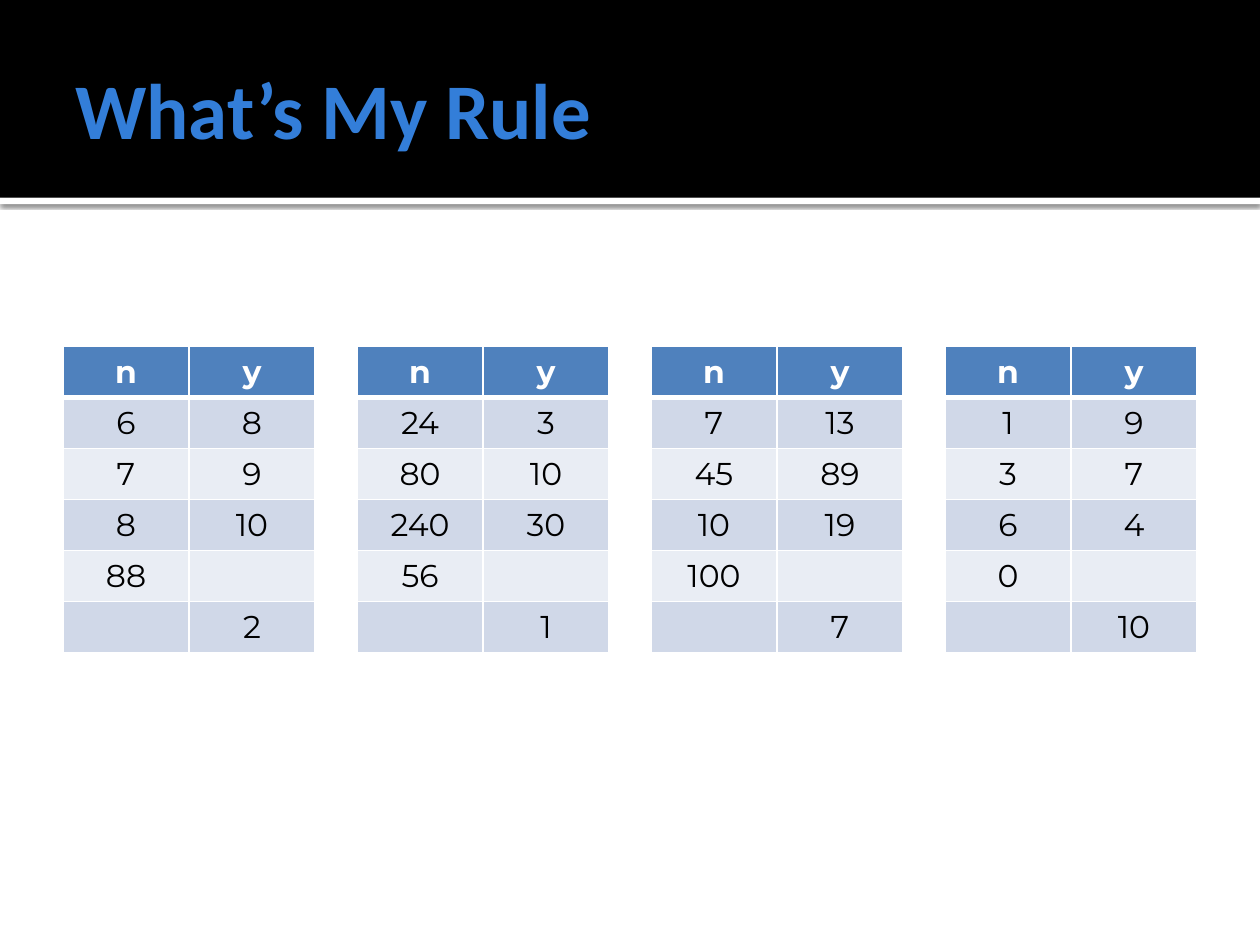
from lxml import etree
from pptx import Presentation
from pptx.dml.color import RGBColor
from pptx.enum import shapes, text
from pptx.oxml import parse_xml
from pptx.oxml.ns import nsdecls, qn
from pptx.util import Inches, Pt

HEADER, BANDS = "4F81BD", ("D0D8E8", "E9EDF4")
WHITE, BLACK, TITLE_BLUE = "FFFFFF", "000000", "337ED9"

# Number pairs for each rule; a blank is left for the student to fill in
RULES = [
    [("6", "8"), ("7", "9"), ("8", "10"), ("88", ""), ("", "2")],
    [("24", "3"), ("80", "10"), ("240", "30"), ("56", ""), ("", "1")],
    [("7", "13"), ("45", "89"), ("10", "19"), ("100", ""), ("", "7")],
    [("1", "9"), ("3", "7"), ("6", "4"), ("0", ""), ("", "10")],
]


def paint(fill, color):
    fill.solid()
    fill.fore_color.rgb = RGBColor.from_string(color)


def style_font(font, name, size, color, bold):
    font.name, font.size, font.bold = name, Pt(size), bold
    font.color.rgb = RGBColor.from_string(color)


def add_band(slide, left, top, width, height, color):
    band = slide.shapes.add_shape(
        shapes.MSO_SHAPE.RECTANGLE, left, top, width, height)
    paint(band.fill, color)
    band.line.fill.background()
    band.shadow.inherit = False
    return band


def add_drop_shadow(band):
    effects = band._element.spPr.find(qn("a:effectLst"))
    effects.append(parse_xml(
        f'<a:outerShdw {nsdecls("a")} blurRad="{Pt(2.5)}" dist="{Pt(0.8)}" '
        f'dir="5400000" algn="tl" rotWithShape="0"><a:srgbClr val="{BLACK}">'
        '<a:alpha val="60000"/></a:srgbClr></a:outerShdw>'))


def add_header(slide, left, top, width, height):
    # White rule under the black band
    rule = add_band(slide, left, top + height, width, Inches(0.05), WHITE)
    add_drop_shadow(rule)
    add_band(slide, left, top, width, height, BLACK)

    # Title
    title = slide.shapes.add_textbox(
        left + Inches(0.5), top + Inches(0.17), width - Inches(1), Inches(1.37))
    frame = title.text_frame
    frame.word_wrap = True
    frame.vertical_anchor = text.MSO_ANCHOR.MIDDLE
    frame.margin_right = Inches(0.05)
    frame.text = "What’s My Rule"
    style_font(frame.paragraphs[0].runs[0].font, "Calibri", 45, TITLE_BLUE, True)


def add_borders(cell, **widths):
    properties = cell._tc.get_or_add_tcPr()
    for side in "LRTB":
        line = etree.SubElement(
            properties, qn(f"a:ln{side}"), w=str(Pt(widths.get(side, 1))))
        fill = etree.SubElement(line, qn("a:solidFill"))
        etree.SubElement(fill, qn("a:srgbClr"), val=WHITE)


def fill_cell(cell, value, row):
    is_header = row == 0
    # The line between header and body is heavier
    add_borders(cell, T=3 if row == 1 else 1, B=3 if is_header else 1)
    paint(cell.fill, HEADER if is_header else BANDS[(row - 1) % 2])
    cell.text = value
    paragraph = cell.text_frame.paragraphs[0]
    paragraph.alignment = text.PP_ALIGN.CENTER
    for run in paragraph.runs:
        style_font(run.font, "Montserrat", 18,
                   WHITE if is_header else BLACK, is_header)


def add_rule_table(slide, left, top, width, height, pairs):
    rows = [("n", "y"), *pairs]
    table = slide.shapes.add_table(
        len(rows), 2, left, top, width, height).table
    for r, pair in enumerate(rows):
        for c, value in enumerate(pair):
            fill_cell(table.cell(r, c), value, r)


def add_rule_tables(slide, left, top, width, height):
    table_width = Inches(2)
    step = (width - table_width) / (len(RULES) - 1)
    for i, pairs in enumerate(RULES):
        add_rule_table(slide, round(left + i * step), top, table_width, height, pairs)


def main():
    prs = Presentation()
    prs.slide_width, prs.slide_height = Inches(10), Inches(7.5)
    slide = prs.slides.add_slide(prs.slide_layouts[6])
    add_header(slide, 0, 0, prs.slide_width, Inches(1.57))
    add_rule_tables(slide, Inches(0.5), Inches(2.75), Inches(9), Inches(2.43))
    prs.save("out.pptx")


if __name__ == "__main__":
    main()
